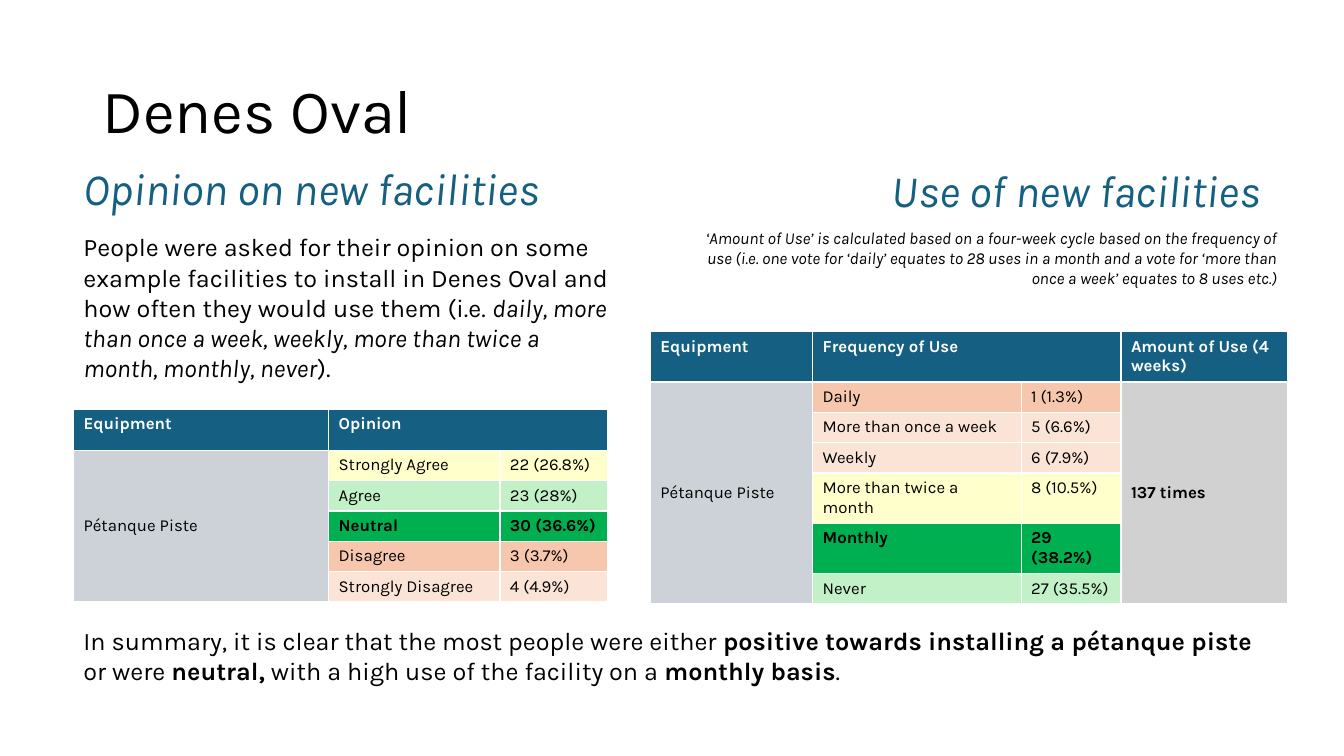
from pptx import Presentation
from pptx.dml.color import RGBColor
from pptx.enum.text import MSO_ANCHOR, MSO_AUTO_SIZE, PP_ALIGN
from pptx.util import Pt

LEFT, RIGHT = PP_ALIGN.LEFT, PP_ALIGN.RIGHT
TOP, MIDDLE = MSO_ANCHOR.TOP, MSO_ANCHOR.MIDDLE
GROW = MSO_AUTO_SIZE.SHAPE_TO_FIT_TEXT

COLORS = {
    "black": "000000", "white": "FFFFFF", "blue": "156082", "slate": "CCD2D8",
    "gray": "D1D1D1", "yellow": "FFFFCC", "mint": "C2F1C8", "green": "00B050",
    "salmon": "F6C6AD", "peach": "FBE3D6",
}


def write(para, parts, size, color="black"):
    """Add runs from (text, style) pairs; style is "", "bold" or "italic"."""
    for text, style in parts:
        run = para.add_run()
        run.text = text
        look = {"name": "Karla", "size": Pt(size),
                "bold": style == "bold", "italic": style == "italic"}
        for key, value in look.items():
            setattr(run.font, key, value)
        run.font.color.rgb = RGBColor.from_string(COLORS[color])


def put(cell, text, fill, style="", color="black", anchor=TOP):
    cell.fill.solid()
    cell.fill.fore_color.rgb = RGBColor.from_string(COLORS[fill])
    cell.vertical_anchor = anchor
    write(cell.text_frame.paragraphs[0], [(text, style)], 12, color)


prs = Presentation()
prs.slide_width, prs.slide_height = Pt(960), Pt(540)
slide = prs.slides.add_slide(prs.slide_layouts[5])

title = slide.shapes.title
place = {"left": 66, "top": 29, "width": 828, "height": 104.4}
for key, value in place.items():
    setattr(title, key, Pt(value))
title.text_frame.vertical_anchor = MIDDLE
head = title.text_frame.paragraphs[0]
head.alignment, head.line_spacing = LEFT, 0.9
write(head, [("Denes Oval", "")], 44)

# Box, alignment, size, colour, runs
texts = [
    ((52.5, 110.9, 394.6, 46), LEFT, 32, "blue",
     [("Opinion on new facilities", "italic")]),
    ((52.5, 162, 394.6, 116.6), LEFT, 18, "black", [
        ("People were asked for their opinion on some example facilities to "
         "install in Denes Oval and how often they would use them (i.e. ", ""),
        ("daily, more than once a week, weekly, more than twice a month, "
         "monthly, never", "italic"),
        (").", "")]),
    ((513.4, 113, 394.6, 46), RIGHT, 32, "blue",
     [("Use of new facilities", "italic")]),
    ((492.5, 159, 427, 51), RIGHT, 12, "black", [
        ("‘Amount of Use’ is calculated based on a four-week cycle based on "
         "the frequency of use (i.e. one vote for ‘daily’ equates to 28 uses "
         "in a month and a vote for ‘more than once a week’ equates to 8 uses "
         "etc.)", "italic")]),
    ((52.5, 442.8, 867, 51), LEFT, 18, "black", [
        ("In summary, it is clear that the most people were either ", ""),
        ("positive towards installing a pétanque piste ", "bold"),
        ("or were ", ""), ("neutral,", "bold"),
        (" with a high use of the facility on a ", ""),
        ("monthly basis", "bold"), (".", "")]),
]
for box, align, size, color, parts in texts:
    frame = slide.shapes.add_textbox(*map(Pt, box)).text_frame
    frame.word_wrap, frame.auto_size = True, GROW
    frame.paragraphs[0].alignment = align
    write(frame.paragraphs[0], parts, size, color)

opinions = [
    ("Strongly Agree", "22 (26.8%)", "yellow"),
    ("Agree", "23 (28%)", "mint"),
    ("Neutral", "30 (36.6%)", "green"),
    ("Disagree", "3 (3.7%)", "salmon"),
    ("Strongly Disagree", "4 (4.9%)", "peach"),
]
uses = [
    ("Daily", "1 (1.3%)", "salmon"),
    ("More than once a week", "5 (6.6%)", "peach"),
    ("Weekly", "6 (7.9%)", "peach"),
    ("More than twice a month", "8 (10.5%)", "yellow"),
    ("Monthly", "29 (38.2%)", "green"),
    ("Never", "27 (35.5%)", "mint"),
]
# Left, top, column widths, row heights, header by column, votes
tables = [
    (52.5, 292.5, (182.2, 122.4, 76.6), [29.3] + [21.6] * 5,
     {0: "Equipment", 1: "Opinion"}, opinions),
    (464.5, 236.9, (115.9, 149, 71.3, 118.8),
     [36] + [21.6] * 3 + [36, 36, 21.6],
     {0: "Equipment", 1: "Frequency of Use", 3: "Amount of Use (4 weeks)"},
     uses),
]
for left, top, widths, heights, header, votes in tables:
    last = len(votes)
    table = slide.shapes.add_table(
        last + 1, len(widths), Pt(left), Pt(top),
        Pt(sum(widths)), Pt(sum(heights))).table
    table.horz_banding = False
    for col, width in zip(table.columns, widths):
        col.width = Pt(width)
    for row, height in zip(table.rows, heights):
        row.height = Pt(height)

    table.cell(0, 1).merge(table.cell(0, 2))
    for col, text in header.items():
        put(table.cell(0, col), text, "blue", "bold", "white")

    sides = [(0, "Pétanque Piste", "slate", ""), (3, "137 times", "gray", "bold")]
    for col, text, fill, style in sides:
        if col in header:
            table.cell(1, col).merge(table.cell(last, col))
            put(table.cell(1, col), text, fill, style, anchor=MIDDLE)

    for row, (label, count, fill) in enumerate(votes, 1):
        style = "bold" if fill == "green" else ""
        put(table.cell(row, 1), label, fill, style)
        put(table.cell(row, 2), count, fill, style)

prs.save("out.pptx")
